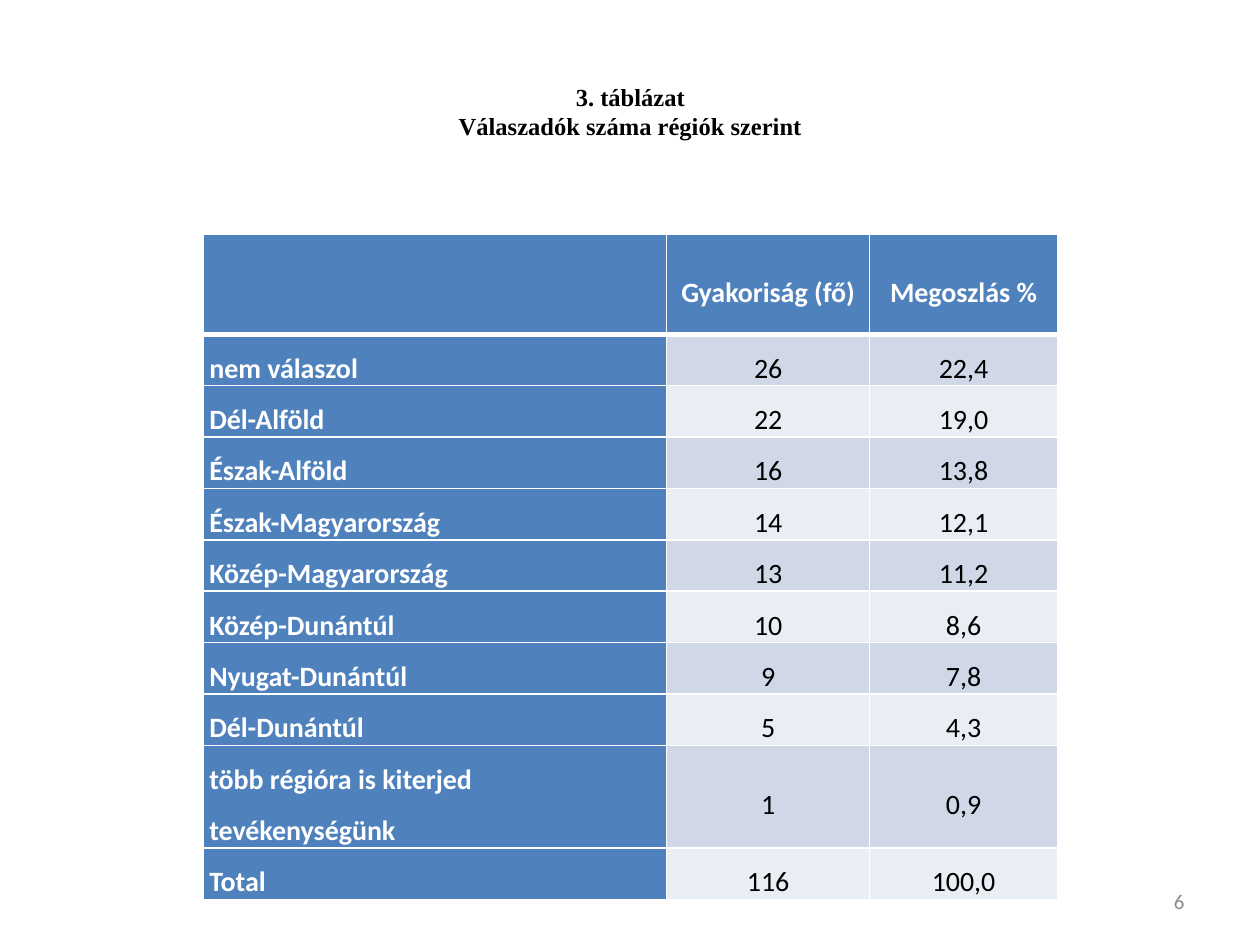
import dataclasses

import lxml.etree
import pptx
import pptx.dml.color
import pptx.enum.text
import pptx.oxml.ns
import pptx.util

Pt = pptx.util.Pt
Align = pptx.enum.text.PP_ALIGN
Anchor = pptx.enum.text.MSO_ANCHOR


@dataclasses.dataclass(frozen=True)
class Theme:
    accent: str = "4F81BD"
    bands: tuple[str, str] = ("D0D8E8", "E9EDF4")
    light: str = "FFFFFF"
    dark: str = "000000"
    muted: str = "8C8C8C"
    body_font: str = "Calibri"
    title_font: str = "Times New Roman"
    title_size: float = 14
    table_size: float = 16
    number_size: float = 12


@dataclasses.dataclass(frozen=True)
class Region:
    name: str
    count: str
    share: str
    height: float = 26.6


THEME = Theme()
HEADER = Region("", "Gyakoriság (fő)", "Megoszlás %", 57)
REGIONS = [
    Region("nem válaszol", "26", "22,4"),
    Region("Dél-Alföld", "22", "19,0"),
    Region("Észak-Alföld", "16", "13,8"),
    Region("Észak-Magyarország", "14", "12,1"),
    Region("Közép-Magyarország", "13", "11,2"),
    Region("Közép-Dunántúl", "10", "8,6"),
    Region("Nyugat-Dunántúl", "9", "7,8"),
    Region("Dél-Dunántúl", "5", "4,3"),
    Region("több régióra is kiterjed tevékenységünk", "1", "0,9", 57),
    Region("Total", "116", "100,0"),
]
COLUMN_WIDTHS = (265, 116, 107.3)


def apply_formats(target, formats: dict) -> None:
    for name, value in formats.items():
        setattr(target, name, value)


def write_para(para, text: str, color: str, font: dict, layout: dict) -> None:
    apply_formats(para, layout)
    if text:
        span = para.add_run()
        span.text = text
        apply_formats(span.font, font)
        span.font.color.rgb = pptx.dml.color.RGBColor.from_string(color)


def add_borders(cell, bottom_width: float) -> None:
    properties = cell._tc.get_or_add_tcPr()
    qn = pptx.oxml.ns.qn
    for side in "LRTB":
        width = bottom_width if side == "B" else 1
        line = lxml.etree.SubElement(properties, qn(f"a:ln{side}"), w=str(int(Pt(width))))
        fill = lxml.etree.SubElement(line, qn("a:solidFill"))
        lxml.etree.SubElement(fill, qn("a:srgbClr"), val=THEME.light)


def draw_cell(cell, text: str, row: int, column: int) -> None:
    is_heading = row == 0 or column == 0
    add_borders(cell, 3 if row == 0 else 1)
    cell.fill.solid()
    fill_color = THEME.accent if is_heading else THEME.bands[(row - 1) % 2]
    cell.fill.fore_color.rgb = pptx.dml.color.RGBColor.from_string(fill_color)
    apply_formats(cell, {
        "margin_left": Pt(3.6), "margin_right": Pt(3.6),
        "margin_top": 0, "margin_bottom": 0,
        "vertical_anchor": Anchor.MIDDLE,
    })
    write_para(
        cell.text_frame.paragraphs[0], text,
        THEME.light if is_heading else THEME.dark,
        {"name": THEME.body_font, "size": Pt(THEME.table_size), "bold": is_heading},
        {"alignment": Align.CENTER if column else Align.LEFT, "line_spacing": 1.5},
    )


def draw_title(title, lines: list[str]) -> None:
    apply_formats(title, {
        "left": Pt(254), "top": Pt(43.2), "width": Pt(212.4), "height": Pt(58.3),
    })
    frame = title.text_frame
    apply_formats(frame, {
        "word_wrap": False, "vertical_anchor": Anchor.TOP,
        "auto_size": pptx.enum.text.MSO_AUTO_SIZE.NONE,
    })
    for index, line in enumerate(lines):
        para = frame.add_paragraph() if index else frame.paragraphs[0]
        write_para(
            para, line, THEME.dark,
            {"name": THEME.title_font, "size": Pt(THEME.title_size), "bold": True},
            {"alignment": Align.CENTER},
        )


def draw_region_table(page, rows: list[Region]) -> None:
    frame = page.shapes.add_table(
        len(rows), len(COLUMN_WIDTHS), Pt(116), Pt(134),
        Pt(sum(COLUMN_WIDTHS)), Pt(sum(region.height for region in rows)),
    )
    table = frame.table
    for column, width in zip(table.columns, COLUMN_WIDTHS):
        column.width = Pt(width)
    for row, region in enumerate(rows):
        table.rows[row].height = Pt(region.height)
        for column, text in enumerate((region.name, region.count, region.share)):
            draw_cell(table.cell(row, column), text, row, column)


def draw_page_number(page, number: str) -> None:
    box = page.shapes.add_textbox(Pt(516), Pt(500.5), Pt(168), Pt(28.8))
    apply_formats(box.text_frame, {"word_wrap": True, "vertical_anchor": Anchor.MIDDLE})
    write_para(
        box.text_frame.paragraphs[0], number, THEME.muted,
        {"name": THEME.body_font, "size": Pt(THEME.number_size)},
        {"alignment": Align.RIGHT},
    )


def main() -> None:
    deck = pptx.Presentation()
    apply_formats(deck, {"slide_width": Pt(720), "slide_height": Pt(540)})
    page = deck.slides.add_slide(deck.slide_layouts.get_by_name("Title Only"))

    # Table of respondents by region
    draw_region_table(page, [HEADER, *REGIONS])

    # Page number and caption
    draw_page_number(page, "6")
    draw_title(page.shapes.title, ["3. táblázat", "Válaszadók száma régiók szerint"])

    deck.save("out.pptx")


if __name__ == "__main__":
    main()
